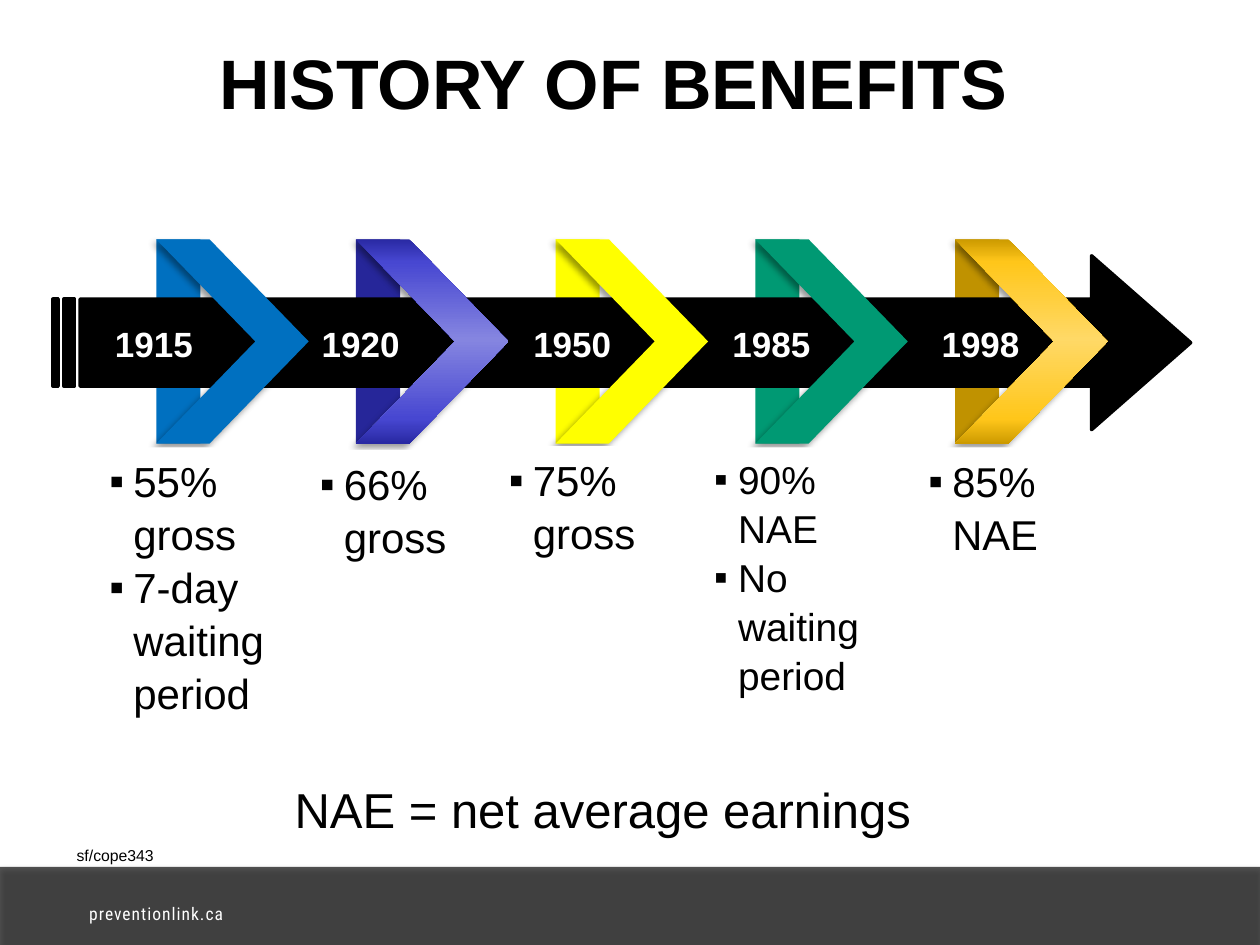
from dataclasses import dataclass

from pptx import Presentation
from pptx.dml.color import RGBColor
from pptx.enum.shapes import MSO_SHAPE
from pptx.enum.text import MSO_ANCHOR, PP_ALIGN
from pptx.oxml import parse_xml
from pptx.oxml.ns import nsdecls, qn
from pptx.util import Inches, Pt


@dataclass(frozen=True)
class Theme:
    font: str = "Arial"
    footer_font: str = "Roboto Condensed"
    black: str = "000000"
    white: str = "FFFFFF"
    title: float = 40
    note: float = 28
    year: float = 20
    footer: float = 10
    reference: float = 9


@dataclass(frozen=True)
class Milestone:
    year: str
    year_left: float
    strip: str
    chevron: tuple
    benefits: tuple
    box: tuple
    size: float


THEME = Theme()
GRADIENT_POSITIONS = (0, 11, 49, 88, 100)
MILESTONES = (
    Milestone("1915", 0.79, "0070C0", ("0070C0",),
              ("55% gross", "7-day waiting period"), (0.77, 3.55, 1.47, 2.23), 24),
    Milestone("1920", 2.43, "262699", ("2929A3", "4747D1", "8585E0", "4747D1", "2929A3"),
              ("66% gross",), (2.44, 3.57, 1.23, 1.02), 24),
    Milestone("1950", 4.11, "FFFF00", ("FFFF00",),
              ("75% gross",), (3.94, 3.54, 1.36, 1.01), 24),
    Milestone("1985", 5.69, "009973", ("009973",),
              ("90% NAE", "No waiting period"), (5.57, 3.55, 1.37, 1.9), 22.2),
    Milestone("1998", 7.35, "C09200", ("CC9A00", "FFC61A", "FFD966", "FFC61A", "CC9A00"),
              ("85% NAE",), (7.27, 3.55, 1.1, 0.91), 23.8),
)


def add_solid(slide, kind, box, color):
    shape = slide.shapes.add_shape(kind, *map(Inches, box))
    shape.shadow.inherit = False
    shape.fill.solid()
    shape.fill.fore_color.rgb = RGBColor.from_string(color)
    shape.line.fill.background()
    return shape


def add_shadow(shape, opacity, blur, distance, angle):
    properties = shape._element.spPr
    properties.find(qn("a:effectLst")).append(parse_xml(
        f'<a:outerShdw {nsdecls("a")} blurRad="{Pt(blur)}" dist="{Pt(distance)}" '
        f'dir="{angle * 60000}" rotWithShape="0"><a:srgbClr val="{THEME.black}">'
        f'<a:alpha val="{opacity * 1000}"/></a:srgbClr></a:outerShdw>'))


def fill_gradient(shape, colors):
    shape.fill.gradient()
    shape.fill.gradient_angle = 270
    stops = shape._element.spPr.find(qn("a:gradFill")).find(qn("a:gsLst"))
    for stop in list(stops):
        stops.remove(stop)
    for position, color in zip(GRADIENT_POSITIONS, colors):
        stops.append(parse_xml(
            f'<a:gs {nsdecls("a")} pos="{position * 1000}"><a:srgbClr val="{color}"/></a:gs>'))


def add_bullet(paragraph):
    properties = paragraph._p.get_or_add_pPr()
    properties.set("marL", str(Inches(0.19)))
    properties.set("indent", str(-Inches(0.19)))
    properties.append(parse_xml(f'<a:buFont {nsdecls("a")} typeface="{THEME.font}"/>'))
    properties.append(parse_xml(f'<a:buChar {nsdecls("a")} char="▪"/>'))


def add_text(slide, box, lines, size, color=THEME.black, font=THEME.font,
             bold=False, align=PP_ALIGN.LEFT, bullets=False):
    shape = slide.shapes.add_textbox(*map(Inches, box))
    frame = shape.text_frame
    frame.word_wrap = True
    for index, line in enumerate(lines):
        paragraph = frame.paragraphs[0] if index == 0 else frame.add_paragraph()
        paragraph.text = line
        paragraph.alignment = align
        if bullets:
            paragraph.line_spacing = 1.05
            add_bullet(paragraph)
        paragraph.font.name = font
        paragraph.font.size = Pt(size)
        paragraph.font.bold = bold
        paragraph.font.color.rgb = RGBColor.from_string(color)
    return shape


def add_footer(slide, box):
    left, top, width, height = box
    bar = add_solid(slide, MSO_SHAPE.RECTANGLE, box, THEME.black)
    color = bar._element.spPr.find(qn("a:solidFill"))[0]
    color.append(parse_xml(f'<a:alpha {nsdecls("a")} val="67000"/>'))
    add_shadow(bar, 35, 3.1, 1.8, 90)
    address = add_text(slide, (left + 0.61, top + 0.24, 1.49, 0.27), ["preventionlink.ca"],
                       THEME.footer, THEME.white, THEME.footer_font)
    paragraph = address.text_frame.paragraphs[0]
    paragraph._p.pPr.find(qn("a:defRPr")).set("spc", "60")


def add_title(slide, box):
    title = add_text(slide, box, ["HISTORY OF BENEFITS"], THEME.title,
                     bold=True, align=PP_ALIGN.CENTER)
    title.text_frame.vertical_anchor = MSO_ANCHOR.MIDDLE
    title.text_frame.margin_right = Inches(0.36)


def add_timeline(slide, box):
    left, top, width, height = box
    pitch = 6.34 / (len(MILESTONES) - 1)
    lefts = [left + 0.82 + index * pitch for index in range(len(MILESTONES))]
    for milestone, strip_left in zip(MILESTONES, lefts):
        add_solid(slide, MSO_SHAPE.RECTANGLE, (strip_left, top, 0.35, height), milestone.strip)

    arrow = add_solid(slide, MSO_SHAPE.STRIPED_RIGHT_ARROW,
                      (left, top + 0.13, width, 1.38), THEME.black)
    arrow.adjustments[0] = 0.5
    arrow.adjustments[1] = 0.57
    arrow.line.color.rgb = RGBColor.from_string(THEME.black)
    arrow.line.width = Pt(2)

    for milestone, chevron_left in zip(MILESTONES, lefts):
        chevron = add_solid(slide, MSO_SHAPE.CHEVRON,
                            (chevron_left, top, 1.21, height), milestone.chevron[0])
        chevron.adjustments[0] = 0.65
        if len(milestone.chevron) > 1:
            fill_gradient(chevron, milestone.chevron)
        add_shadow(chevron, 40, 4, 3, 135)

    for milestone in MILESTONES:
        add_text(slide, (milestone.year_left, top + 0.61, 0.84, 0.41), [milestone.year],
                 THEME.year, THEME.white, bold=True, align=PP_ALIGN.RIGHT)


def add_benefits(slide):
    for milestone in MILESTONES:
        panel = add_text(slide, milestone.box, milestone.benefits, milestone.size, bullets=True)
        panel.fill.solid()
        panel.fill.fore_color.rgb = RGBColor.from_string(THEME.white)


def add_notes_line(slide, box):
    left, top, width, height = box
    add_text(slide, box, ["NAE = net average earnings"], THEME.note)
    add_text(slide, (left - 1.73, top + 0.52, 1.89, 0.25), ["sf/cope343"], THEME.reference)


def main():
    presentation = Presentation()
    presentation.slide_width = Inches(10)
    presentation.slide_height = Inches(7.5)
    slide = presentation.slides.add_slide(presentation.slide_layouts[6])
    add_footer(slide, (0, 6.88, 10, 0.62))
    add_title(slide, (0, 0.02, 10, 1.25))
    add_timeline(slide, (0.42, 1.9, 9.03, 1.62))
    add_benefits(slide)
    add_notes_line(slide, (2.24, 6.14, 5.55, 0.57))
    presentation.save("out.pptx")


if __name__ == "__main__":
    main()
